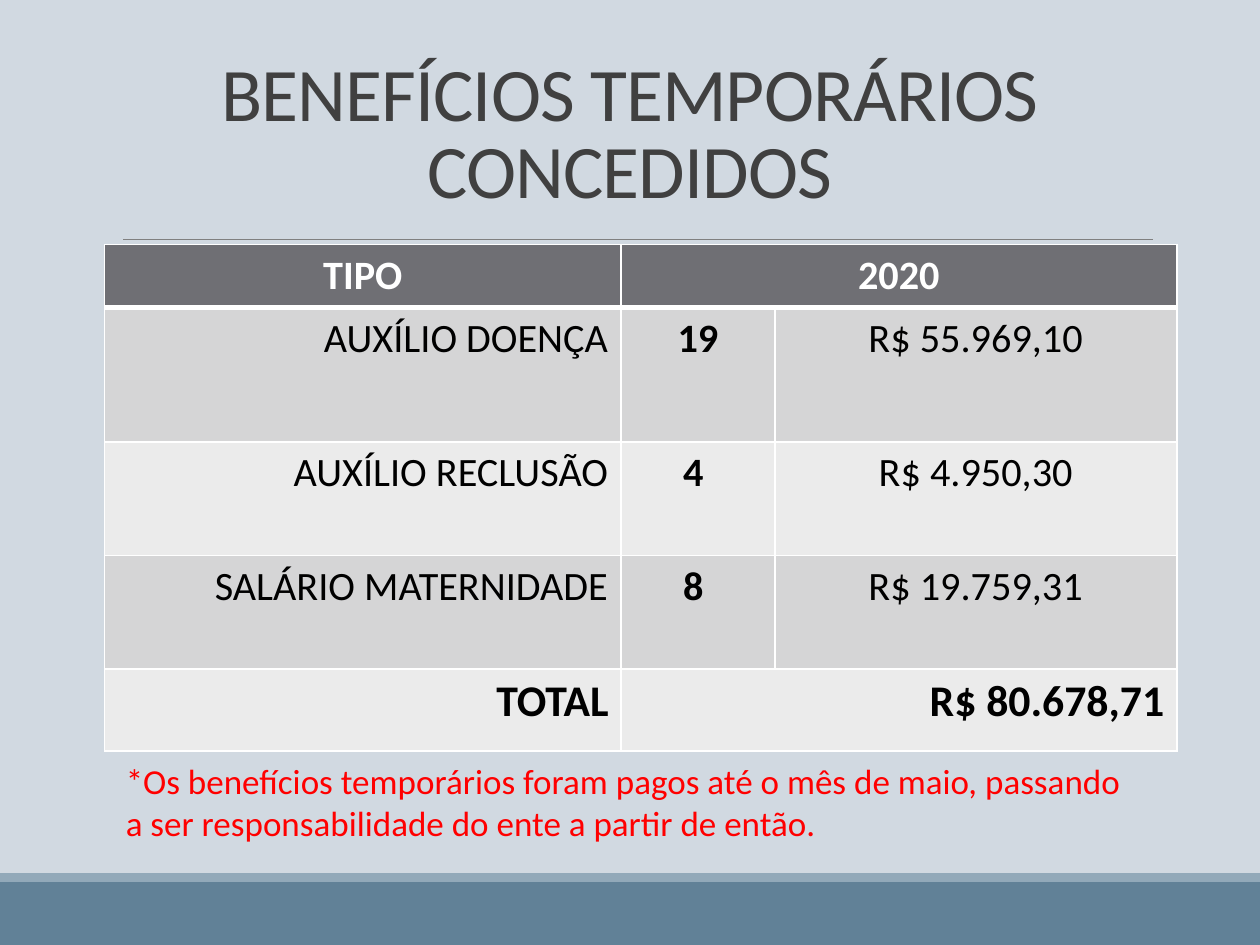
from dataclasses import dataclass

from lxml import etree
from pptx import Presentation
from pptx import util as u
from pptx.dml.color import RGBColor
from pptx.enum import shapes, text
from pptx.oxml.ns import qn

PX = 9144  # EMU in one px, 100 px to the inch
FONT = "Calibri"
LEFT, MID, RIGHT = text.PP_ALIGN.LEFT, text.PP_ALIGN.CENTER, text.PP_ALIGN.RIGHT
HEAD, DARK, PALE = "6F6F74", "D5D5D6", "EBEBEB"
WHITE, BLACK = "FFFFFF", "000000"


@dataclass
class Band:
    top: int
    high: int
    fill: str


@dataclass
class Cell:
    words: str
    align: int
    bold: bool = False
    span: int = 1


@dataclass
class Row:
    high: int
    fill: str
    cells: list[Cell]
    size: int = 23
    color: str = BLACK
    rule: int = 1  # width of the bottom border in points


def px(*nums: int) -> list[u.Emu]:
    return [u.Emu(n * PX) for n in nums]


def rgb(code: str) -> RGBColor:
    return RGBColor.from_string(code)


def put(obj, vals: dict) -> None:
    for name, val in vals.items():
        setattr(obj, name, val)


def write(para, words: str, size: float, color: str, align=LEFT, bold=False) -> None:
    para.text = words
    para.alignment = align
    for run in para.runs:
        put(run.font, {"name": FONT, "size": u.Pt(size), "bold": bold})
        run.font.color.rgb = rgb(color)


def draw_band(slide, band: Band) -> None:
    box = slide.shapes.add_shape(shapes.MSO_SHAPE.RECTANGLE,
                                 *px(0, band.top, 1000, band.high))
    box.shadow.inherit = False
    box.fill.solid()
    box.fill.fore_color.rgb = rgb(band.fill)
    box.line.fill.background()


def edge(cell, side: str, width: int) -> None:
    line = etree.SubElement(cell._tc.get_or_add_tcPr(), qn(f"a:ln{side}"),
                            w=str(u.Pt(width)))
    fill = etree.SubElement(line, qn("a:solidFill"))
    etree.SubElement(fill, qn("a:srgbClr"), val=WHITE)


def draw_row(table, i: int, row: Row) -> None:
    table.rows[i].height = px(row.high)[0]
    for cell in table.rows[i].cells:
        for side in "LRT":
            edge(cell, side, 1)
        edge(cell, "B", row.rule)
        cell.fill.solid()
        cell.fill.fore_color.rgb = rgb(row.fill)
    for j, item in enumerate(row.cells):
        cell = table.cell(i, j)
        if item.span > 1:
            cell.merge(table.cell(i, j + item.span - 1))
        write(cell.text_frame.paragraphs[0], item.words, row.size, row.color,
              item.align, item.bold)


def kind(high: int, fill: str, name: str, count: str, sum_: str) -> Row:
    return Row(high, fill, [Cell(name, RIGHT), Cell(count, MID, True), Cell(sum_, MID)])


COLS = [410, 122, 319]
ROWS = [
    Row(50, HEAD, [Cell("TIPO", MID, True), Cell("2020", MID, True, 2)],
        color=WHITE, rule=3),
    kind(107, DARK, "AUXÍLIO DOENÇA", "19", "R$ 55.969,10"),
    kind(90, PALE, "AUXÍLIO RECLUSÃO", "4 ", "R$ 4.950,30"),
    kind(90, DARK, "SALÁRIO MATERNIDADE", "8 ", "R$ 19.759,31"),
    Row(65, PALE, [Cell("TOTAL", RIGHT, True), Cell("R$ 80.678,71", RIGHT, True, 2)],
        size=25),
]
BANDS = [Band(700, 50, "618197"), Band(693, 7, "92A9B9")]
NOTE = ["*Os benefícios temporários foram pagos até o mês de maio, passando",
        "a ser responsabilidade do ente a partir de então."]


def main() -> None:
    prs = Presentation()
    prs.slide_width, prs.slide_height = px(1000, 750)
    slide = prs.slides.add_slide(prs.slide_layouts[5])
    slide.background.fill.solid()
    slide.background.fill.fore_color.rgb = rgb("D1D9E1")

    # Footer bands and the rule under the title
    for band in BANDS:
        draw_band(slide, band)
    rule = slide.shapes.add_connector(shapes.MSO_CONNECTOR.STRAIGHT,
                                      *px(98, 190, 915, 190))
    rule.line.color.rgb = rgb("808080")
    rule.line.width = u.Pt(0.5)
    etree.SubElement(rule._element.spPr, qn("a:effectLst"))

    # Title
    title = slide.shapes.title
    put(title, dict(zip(("left", "top", "width", "height"), px(0, 99, 1000, 76))))
    frame = title.text_frame
    put(frame, {"vertical_anchor": text.MSO_ANCHOR.BOTTOM, "word_wrap": True,
                "auto_size": text.MSO_AUTO_SIZE.NONE})
    para = frame.paragraphs[0]
    write(para, "BENEFÍCIOS TEMPORÁRIOS\vCONCEDIDOS", 43.2, "404040", MID)
    para.line_spacing = 0.85
    for run in para.runs:
        run.font._element.set("spc", "-50")

    # Table of benefits
    high = sum(row.high for row in ROWS)
    table = slide.shapes.add_table(len(ROWS), len(COLS),
                                   *px(83, 194, sum(COLS), high)).table
    for col, wide in zip(table.columns, COLS):
        col.width = px(wide)[0]
    for i, row in enumerate(ROWS):
        draw_row(table, i, row)

    # Note below the table
    frame = slide.shapes.add_textbox(*px(90, 598, 906, 77)).text_frame
    put(frame, {"word_wrap": True, "auto_size": text.MSO_AUTO_SIZE.SHAPE_TO_FIT_TEXT})
    for i, words in enumerate(NOTE):
        para = frame.add_paragraph() if i else frame.paragraphs[0]
        write(para, words, 20, "FF0000")

    prs.save("out.pptx")


if __name__ == "__main__":
    main()
